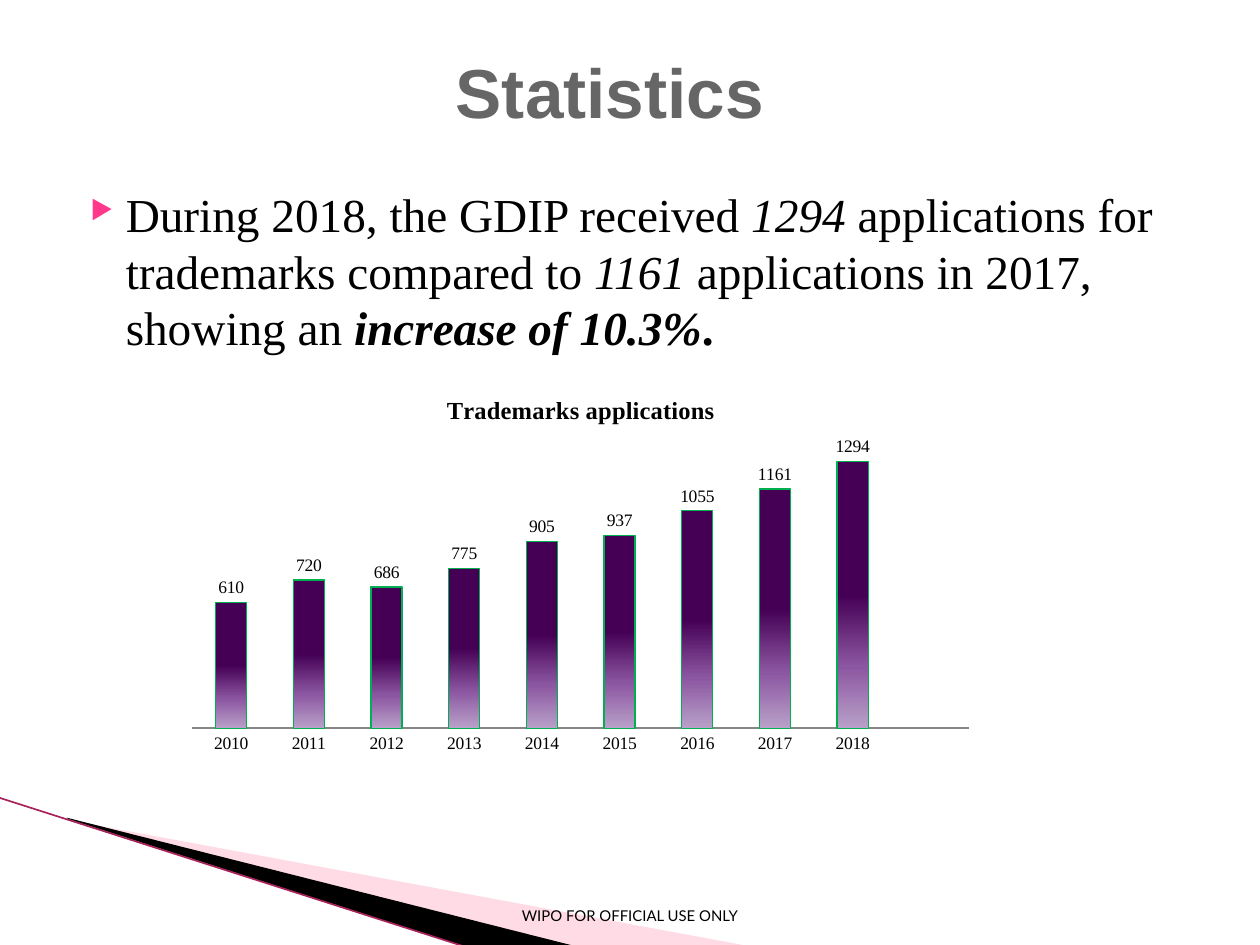
from copy import deepcopy
from dataclasses import dataclass

from lxml.etree import SubElement
from pptx import Presentation
from pptx.chart.data import CategoryChartData
from pptx.dml.color import RGBColor
from pptx.enum.chart import XL_CHART_TYPE, XL_LABEL_POSITION, XL_TICK_MARK
from pptx.enum.shapes import MSO_CONNECTOR
from pptx.enum.text import MSO_ANCHOR, PP_ALIGN
from pptx.oxml import parse_xml
from pptx.oxml.ns import nsdecls, qn
from pptx.util import Inches, Pt


@dataclass(frozen=True)
class Theme:
    ink: str = "000000"
    head: str = "666666"
    mark: str = "FF388C"
    blush: str = "FFA5BF"
    edge: str = "A8235A"
    rim: str = "00B050"
    axis: str = "868686"
    fade: tuple = ((0, "B8A0C8"), (0.23, "8C57A2"), (0.5, "450055"))
    serif: str = "Times New Roman"
    sans: str = "Arial"
    foot: str = "Lato"
    head_size: float = 39.6
    body_size: float = 27
    foot_size: float = 8.5
    chart_size: float = 10
    name_size: float = 14


THEME = Theme()


def tint(code):
    return RGBColor.from_string(code)


def apply(item, values):
    for key, value in values.items():
        setattr(item, key, value)


def style(font, name, size, color, **extra):
    apply(font, {"name": name, "size": Pt(size), **extra})
    font.color.rgb = tint(color)


def add_text(slide, box, runs, look, align=PP_ALIGN.LEFT, **frame):
    text = slide.shapes.add_textbox(*map(Inches, box)).text_frame
    apply(text, {"word_wrap": True, **frame})
    para = text.paragraphs[0]
    para.alignment = align
    for words, extra in runs:
        run = para.add_run()
        run.text = words
        style(run.font, *look, **extra)
    return para


def add_mark(para):
    props = para._p.get_or_add_pPr()
    for key, value in {"marL": 0.4, "indent": -0.28}.items():
        props.set(key, str(Inches(value)))
    color = SubElement(props, qn("a:buClr"))
    SubElement(color, qn("a:srgbClr"), val=THEME.mark)
    SubElement(props, qn("a:buSzPct"), val="55000")
    SubElement(props, qn("a:buChar"), char="▶")


def set_frame(shape, box):
    left, top, width, height = map(Inches, box)
    shift = {"x": shape.left - left, "y": shape.top - top}
    track = shape._element.spPr.find(".//" + qn("a:path"))
    for spot in track.iter(qn("a:pt")):
        for key, value in shift.items():
            spot.set(key, str(int(spot.get(key)) + value))
    track.set("w", str(width))
    track.set("h", str(height))
    apply(shape, {"left": left, "top": top, "width": width, "height": height})


def add_wedge(slide, box, points, color, alpha=100):
    spots = [(Inches(x), Inches(y)) for x, y in points]
    build = slide.shapes.build_freeform(*spots[0], scale=1.0)
    build.add_line_segments(spots[1:], close=True)
    shape = build.convert_to_shape()
    set_frame(shape, box)
    shape.shadow.inherit = False
    shape.fill.solid()
    shape.fill.fore_color.rgb = tint(color)
    shape.line.fill.background()
    if alpha < 100:
        node = shape._element.spPr.find(".//" + qn("a:srgbClr"))
        SubElement(node, qn("a:alpha"), val=str(alpha * 1000))


def add_edge(slide, start, end):
    line = slide.shapes.add_connector(
        MSO_CONNECTOR.STRAIGHT, *map(Inches, start + end))
    line.line.color.rgb = tint(THEME.edge)
    line.line.width = Pt(0.95)
    SubElement(line._element.spPr, qn("a:effectLst"))


def fill_bars(series):
    fill = series.format.fill
    fill.gradient()
    fill.gradient_angle = 90
    stops = series._element.find(".//" + qn("a:gsLst"))
    stops.insert(1, deepcopy(stops[0]))
    for stop, (place, color) in zip(fill.gradient_stops, THEME.fade):
        stop.position = place
        stop.color.rgb = tint(color)
    series.format.line.color.rgb = tint(THEME.rim)
    series.format.line.width = Pt(0.75)


def place_plot(chart, **sides):
    area = chart._chartSpace.chart.plotArea
    for old in area.findall(qn("c:layout")):
        area.remove(old)
    parts = {"layoutTarget": "inner", "xMode": "edge", "yMode": "edge", **sides}
    body = "".join(f'<c:{key} val="{val}"/>' for key, val in parts.items())
    area.insert(0, parse_xml(
        f"<c:layout {nsdecls('c')}><c:manualLayout>{body}"
        "</c:manualLayout></c:layout>"))


def add_bars(slide, box, title, values):
    data = CategoryChartData()
    data.categories = [str(2010 + step) for step in range(len(values))] + [""]
    data.add_series("Series 1", values + [None])
    chart = slide.shapes.add_chart(
        XL_CHART_TYPE.COLUMN_CLUSTERED, *map(Inches, box), data).chart
    style(chart.font, THEME.serif, THEME.chart_size, THEME.ink)
    chart.has_legend = False
    frame = chart.chart_title.text_frame
    frame.text = title
    style(frame.paragraphs[0].runs[0].font, THEME.serif, THEME.name_size,
          THEME.ink, bold=True)
    apply(chart.value_axis, {"minimum_scale": 0, "maximum_scale": 1400,
                             "has_major_gridlines": False, "visible": False})
    apply(chart.category_axis, {"major_tick_mark": XL_TICK_MARK.NONE})
    chart.category_axis.format.line.color.rgb = tint(THEME.axis)
    chart.category_axis.format.line.width = Pt(1)
    plot = chart.plots[0]
    apply(plot, {"gap_width": 150, "vary_by_categories": False,
                 "has_data_labels": True})
    apply(plot.data_labels, {"show_value": True,
                             "position": XL_LABEL_POSITION.OUTSIDE_END})
    fill_bars(plot.series[0])
    place_plot(chart, x=0.03, y=0.15, w=0.94, h=0.66)


def main():
    deck = Presentation()
    apply(deck, {"slide_width": Inches(10), "slide_height": Inches(7.5)})
    slide = deck.slides.add_slide(deck.slide_layouts[6])
    add_wedge(slide, (0.78, 5.47, 4.16, 1.58),
              [(0.55, 6.51), (5.95, 7.51), (4.56, 7.51), (0.55, 6.5)],
              THEME.blush, 40)
    add_wedge(slide, (-0.06, 6.33, 4.16, 0.92),
              [(0.53, 6.49), (4.57, 7.51), (3.72, 7.52), (0.54, 6.5)],
              THEME.ink)
    add_edge(slide, (-0.01, 6.33), (3.71, 7.52))
    add_text(slide, (0, 7.15, 10, 0.24), [("WIPO FOR OFFICIAL USE ONLY", {})],
             (THEME.foot, THEME.foot_size, THEME.ink), PP_ALIGN.CENTER)
    slant = {"italic": True}
    para = add_text(slide, (0.5, 1.42, 9, 5.28), [
        ("During 2018, the GDIP received ", {}),
        ("1294 ", slant),
        ("applications for trademarks compared to ", {}),
        ("1161 ", slant),
        ("applications in 2017, showing an ", {}),
        ("increase of 10.3%", {"bold": True, **slant}),
        (".", {"bold": True, **slant, "italic": False}),
    ], (THEME.serif, THEME.body_size, THEME.ink))
    add_mark(para)
    add_text(slide, (0.34, 0.28, 9, 0.88), [("Statistics", {"bold": True})],
             (THEME.sans, THEME.head_size, THEME.head), PP_ALIGN.CENTER,
             vertical_anchor=MSO_ANCHOR.MIDDLE)
    add_bars(slide, (1.33, 2.97, 6.56, 3.47), "Trademarks applications",
             [610, 720, 686, 775, 905, 937, 1055, 1161, 1294])
    deck.save("out.pptx")


if __name__ == "__main__":
    main()
